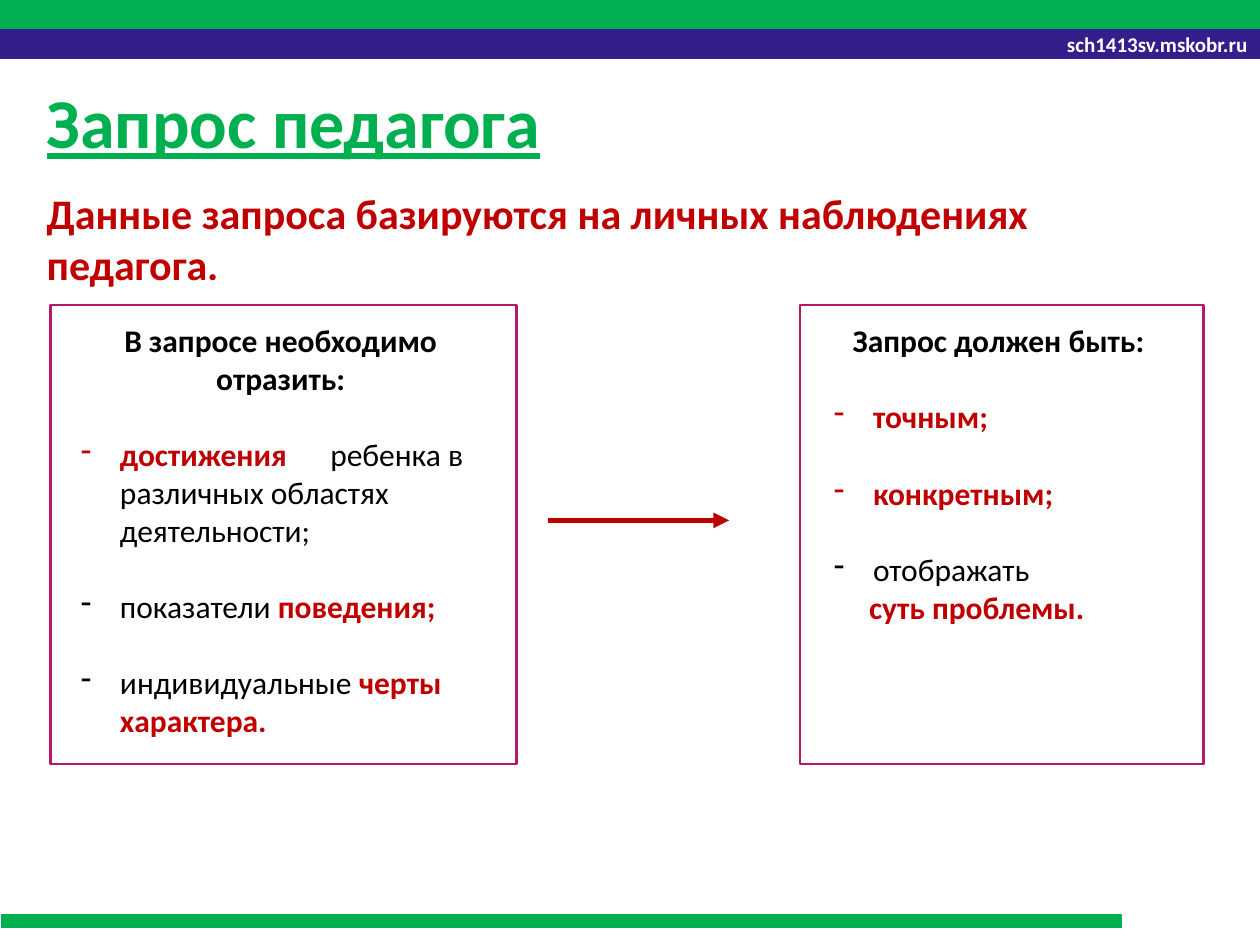
from lxml import etree
from pptx import Presentation
from pptx import util as u
from pptx.dml.color import RGBColor
from pptx.enum import shapes, text
from pptx.oxml.ns import qn

GREEN = RGBColor(0x00, 0xB0, 0x50)
VIOLET = RGBColor(0x35, 0x1D, 0x8C)
RED = RGBColor(0xC0, 0x00, 0x00)
MAGENTA = RGBColor(0xB4, 0x18, 0x6E)
BLACK = RGBColor(0x00, 0x00, 0x00)
WHITE = RGBColor(0xFF, 0xFF, 0xFF)

FONT = "Calibri"
HANG = u.Cm(0.79)
LINE_GAP = u.Pt(22)


def style(r, size, color, bold=True):
    """Set the font of one run."""
    r.font.name = FONT
    r.font.size = u.Pt(size)
    r.font.bold = bold
    r.font.color.rgb = color


def add_rect(s, x, y, w, h, line, width, fill=None):
    """Draw a rectangle, hollow unless a fill is given."""
    sp = s.shapes.add_shape(shapes.MSO_SHAPE.RECTANGLE, u.Cm(x), u.Cm(y), u.Cm(w), u.Cm(h))
    sp.shadow.inherit = False
    if fill is None:
        sp.fill.background()
    else:
        sp.fill.solid()
        sp.fill.fore_color.rgb = fill
    sp.line.color.rgb = line
    sp.line.width = u.Pt(width)
    return sp


def add_text(s, x, y, w, h):
    """Add a wrapping text box and return its text frame."""
    tf = s.shapes.add_textbox(u.Cm(x), u.Cm(y), u.Cm(w), u.Cm(h)).text_frame
    tf.word_wrap = True
    return tf


def add_bars(s):
    """Draw the header and footer bars with the site address."""
    add_rect(s, 0, 0, 25.4, 0.56, GREEN, 1, GREEN)
    header = add_rect(s, 0, 0.61, 25.4, 0.56, VIOLET, 1, VIOLET)
    add_rect(s, 0.03, 18.44, 22.58, 0.25, GREEN, 1, GREEN)
    tf = header.text_frame
    tf.vertical_anchor = text.MSO_ANCHOR.MIDDLE
    p = tf.paragraphs[0]
    p.text = "sch1413sv.mskobr.ru"
    p.alignment = text.PP_ALIGN.RIGHT
    style(p.runs[0], 12, WHITE)


def add_heading(s, x, y, w):
    """Place the title and the statement below it."""
    tf = add_text(s, x, y, w, 2.49)
    tf.vertical_anchor = text.MSO_ANCHOR.MIDDLE
    p = tf.paragraphs[0]
    p.text = "Запрос педагога"
    p.line_spacing = 0.9
    style(p.runs[0], 40, GREEN)
    p.runs[0].font.underline = True
    p = add_text(s, x, y + 2.36, w - 0.23, 2.31).paragraphs[0]
    p.text = "Данные запроса базируются на личных наблюдениях педагога."
    style(p.runs[0], 24, RED)


def add_dash(p, tab):
    """Give a paragraph a hanging dash and an optional tab stop."""
    pPr = p._p.get_or_add_pPr()
    pPr.set("marL", str(HANG))
    pPr.set("indent", str(-HANG))
    etree.SubElement(pPr, qn("a:buChar"), char="-")
    if tab:
        tabs = etree.SubElement(pPr, qn("a:tabLst"))
        etree.SubElement(tabs, qn("a:tab"), pos=str(u.Cm(tab)), algn="l")


def add_card(s, x, y, w, h, inset, text_w, title, items, tab=None, tail=None):
    """Draw a framed list; each item is a list of (words, is_key) parts."""
    tf = add_text(s, x + inset, y + 0.2, text_w, h - 0.53)
    p = tf.paragraphs[0]
    p.text = title
    p.alignment = text.PP_ALIGN.CENTER
    style(p.runs[0], 18, BLACK)
    for parts in items + ([tail] if tail else []):
        p = tf.add_paragraph()
        if parts is tail:
            p._p.get_or_add_pPr().set("marL", str(u.Cm(0.71)))
        else:
            p.space_before = LINE_GAP
            add_dash(p, tab if "\t" in parts[0][0] else None)
        for words, key in parts:
            r = p.add_run()
            r.text = words
            style(r, 18, RED if key else BLACK, key)
    add_rect(s, x, y, w, h, MAGENTA, 1.5)


def add_arrow(s, x1, x2, y):
    """Draw the arrow from the left card to the right one."""
    line = s.shapes.add_connector(
        shapes.MSO_CONNECTOR.STRAIGHT, u.Cm(x1), u.Cm(y), u.Cm(x2), u.Cm(y))
    line.line.color.rgb = RED
    line.line.width = u.Pt(3)
    etree.SubElement(line.line._get_or_add_ln(), qn("a:tailEnd"), type="triangle")
    etree.SubElement(line._element.spPr, qn("a:effectLst"))


def main():
    """Build the slide and save it."""
    prs = Presentation()
    prs.slide_width, prs.slide_height = u.Cm(25.4), u.Cm(19.05)
    s = prs.slides.add_slide(prs.slide_layouts[6])
    add_bars(s)
    add_heading(s, 0.69, 1.3, 23.8)
    top, height = 6.15, 9.25
    add_card(s, 1.02, top, 9.4, height, 0.36, 8.56, "В запросе необходимо отразить:", [
        [("достижения\t", True), ("ребенка в различных областях деятельности;", False)],
        [("показатели ", False), ("поведения;", True)],
        [("индивидуальные ", False), ("черты характера.", True)],
    ], tab=5.03)
    add_card(s, 16.13, top, 8.13, height, 0.43, 7.14, "Запрос должен быть:", [
        [("точным;", True)],
        [("конкретным;", True)],
        [("отображать", False)],
    ], tail=[("суть проблемы.", True)])
    add_arrow(s, 11.05, 14.7, 10.49)
    prs.save("out.pptx")


if __name__ == "__main__":
    main()
